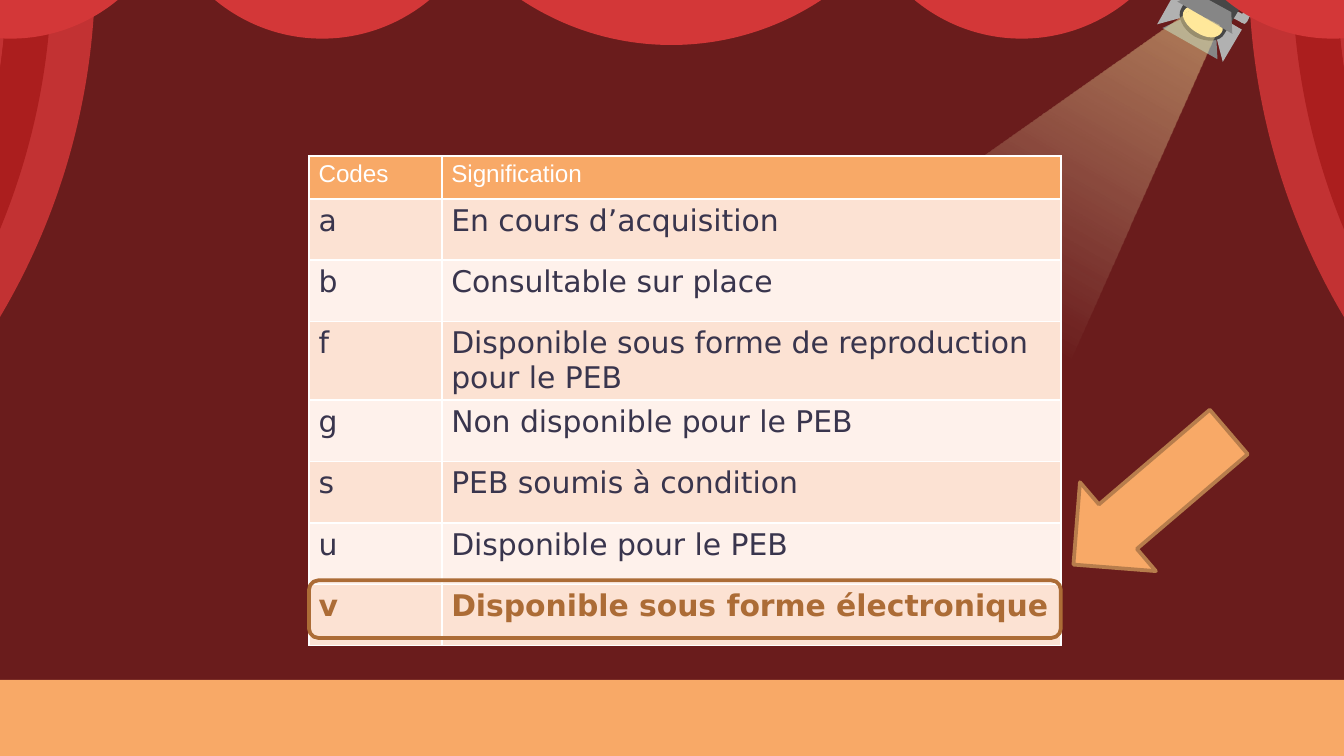
"""Build a theatre-themed slide with a table of lending codes."""
from dataclasses import dataclass

from pptx import Presentation
from pptx.dml.color import RGBColor
from pptx.enum.shapes import MSO_SHAPE as Preset
from pptx.oxml import parse_xml
from pptx.oxml.ns import nsdecls, qn
from pptx.util import Cm, Pt


@dataclass(frozen=True)
class Theme:
    backdrop: str = "6A1C1C"
    curtain: str = "C23233"
    fold: str = "AB1E1E"
    swag: str = "D33738"
    floor: str = "F8A967"
    light_grey: str = "B1B1B1"
    grey: str = "868686"
    dark_grey: str = "474747"
    lens: str = "FFE89A"
    white: str = "FFFFFF"
    ink: str = "39354D"
    accent: str = "AC6C36"
    arrow_line: str = "B77D4C"
    bands: tuple = ("FCE2D3", "FEF1EB")
    beam: tuple = ((0, "FFE89A", 48), (66, "FFF4CD", 0), (100, "FFFFFF", 0))
    header_font: str = "Arial"
    body_font: str = "DejaVu Sans"
    header_size: int = 13
    body_size: int = 16


THEME = Theme()
WIDTH, HEIGHT = 25.4, 14.29
HEADER = ("Codes", "Signification")
CODES = [
    ("a", "En cours d’acquisition"),
    ("b", "Consultable sur place"),
    ("f", "Disponible sous forme de reproduction pour le PEB"),
    ("g", "Non disponible pour le PEB"),
    ("s", "PEB soumis à condition"),
    ("u", "Disponible pour le PEB"),
    ("v", "Disponible sous forme électronique"),
]
HIGHLIGHTED = "v"
TABLE_LEFT, TABLE_TOP = 5.84, 2.95
COLUMN_WIDTHS = (2.51, 11.7)
HEADER_HEIGHT, ROW_HEIGHT = 0.81, 1.16

SPOTLIGHT = [
    (THEME.light_grey, [(23.16, 0.38), (23.47, 0.56), (23.11, 1.17), (22.99, 0.71)]),
    (THEME.light_grey, [(22.23, -0.18), (22.53, 0), (22.35, 0.33), (21.87, 0.46)]),
    (THEME.light_grey, [(23.62, 0.18), (24.05, 0.41), (23.98, 0.53), (23.55, 0.28)]),
    (THEME.light_grey, [(22.86, 0.03), (22.89, -0.03, 22.94, -0.03, 22.96, 0),
                        (23.55, 0.3), (23.57, 0.33, 23.57, 0.38, 23.57, 0.41),
                        (23.55, 0.46, 23.5, 0.46, 23.47, 0.43), (22.91, 0.13),
                        (22.86, 0.1, 22.86, 0.05, 22.86, 0.03)]),
    (THEME.grey, [(21.97, 0.53), (22.33, 0.36), (22.99, 0.74), (23.01, 1.12)]),
    (THEME.dark_grey, [(22.78, -0.64), (22.86, -0.79, 23.11, -0.81, 23.37, -0.69),
                       (23.6, -0.53, 23.7, -0.3, 23.62, -0.15), (23.14, 0.64),
                       (23.06, 0.79, 22.81, 0.81, 22.58, 0.69),
                       (22.35, 0.56, 22.23, 0.3, 22.33, 0.15)]),
    (THEME.lens, [(22.38, 0.2), (22.45, 0.08, 22.66, 0.08, 22.86, 0.2),
                  (23.04, 0.3, 23.16, 0.51, 23.09, 0.61),
                  (23.01, 0.74, 22.81, 0.74, 22.61, 0.61),
                  (22.43, 0.51, 22.3, 0.3, 22.38, 0.2)]),
    (THEME.grey, [(22.25, 0.03), (22.61, -0.13), (23.27, 0.23), (23.29, 0.64)]),
    (THEME.light_grey, [(23.04, -0.28), (23.06, -0.33, 23.11, -0.33, 23.14, -0.3),
                        (23.7, 0.03), (23.75, 0.03, 23.75, 0.08, 23.72, 0.1),
                        (23.57, 0.41), (23.55, 0.46, 23.5, 0.46, 23.47, 0.43),
                        (23.42, 0.43, 23.42, 0.38, 23.44, 0.33), (23.57, 0.1),
                        (23.06, -0.18), (23.04, -0.2, 23.04, -0.25, 23.04, -0.28)]),
]
BEAM = [(22.48, 0.2), (14.76, 5.64), (19.76, 7.87), (23.04, 0.48)]
BEAM_ANGLE = 120
CURTAIN = [
    (THEME.curtain, [(29.69, -2.18), (29.69, 10.39),
                     (26.04, 8.1, 23.6, 4.04, 23.6, -0.58), (23.6, -2.18)]),
    (THEME.fold, [(24.43, -0.1), (24.69, 0.18, 24.99, 0.38, 25.32, 0.53),
                  (25.6, 3.96, 27.25, 7.01, 29.69, 9.14), (29.69, 9.83),
                  (26.62, 7.54, 24.59, 3.96, 24.43, -0.1)]),
    (THEME.curtain, [(29.69, -2.18), (29.69, 9.14),
                     (26.97, 6.78, 25.27, 3.3, 25.27, -0.58), (25.27, -2.18)]),
]
SWAGS = [(25.19, -2.46, 3.19), (19.31, -2.46, 3.19), (0.2, -2.46, 3.19),
         (6.09, -2.46, 3.19), (12.69, -4.32, 5.17)]
ROUNDNESS = 0.55


def color(value):
    """Return a colour from its hexadecimal name."""
    return RGBColor.from_string(value)


def pairs(step):
    """Split a step into its points, in slide units."""
    return [(Cm(x), Cm(y)) for x, y in zip(step[::2], step[1::2])]


def mirror(steps):
    """Reflect steps about the middle of the slide."""
    return [tuple(value if index % 2 else WIDTH - value
                  for index, value in enumerate(step)) for step in steps]


def half_circle(centre, top, radius):
    """Return the steps of a hanging half circle."""
    reach = radius * ROUNDNESS
    left, right, bottom = centre - radius, centre + radius, top + radius
    return [(left, top),
            (left, top + reach, centre - reach, bottom, centre, bottom),
            (centre + reach, bottom, right, top + reach, right, top)]


def paint(shape, fill=None, line=None):
    """Set the fill and the outline of a shape and drop its shadow."""
    shape.shadow.inherit = False
    if fill:
        shape.fill.solid()
        shape.fill.fore_color.rgb = color(fill)
    else:
        shape.fill.background()
    if line:
        shape.line.color.rgb = color(line)
        shape.line.width = Pt(2)
    else:
        shape.line.fill.background()
    return shape


def add_outline(slide, steps, fill):
    """Draw a closed outline; two numbers are a point, six a cubic curve."""
    ends = [pairs(step)[-1] for step in steps]
    builder = slide.shapes.build_freeform(*ends[0], scale=1.0)
    builder.add_line_segments(ends[1:], close=False)
    shape = builder.convert_to_shape()
    outline = next(shape.element.iter(qn("a:path")))
    for segment, step in zip(list(outline)[1:], steps[1:]):
        if len(step) == 6:
            points = "".join(f'<a:pt x="{x - shape.left}" y="{y - shape.top}"/>'
                             for x, y in pairs(step))
            outline.replace(segment, parse_xml(
                f'<a:cubicBezTo {nsdecls("a")}>{points}</a:cubicBezTo>'))
    outline.append(parse_xml(f'<a:close {nsdecls("a")}/>'))
    return paint(shape, fill)


def add_preset(slide, preset, box, fill=None, line=None):
    """Add a preset shape in a box given in centimetres."""
    return paint(slide.shapes.add_shape(preset, *map(Cm, box)), fill, line)


def add_beam(slide):
    """Draw the beam of light with a fading gradient."""
    shape = add_outline(slide, BEAM, THEME.lens)
    stops = "".join(
        f'<a:gs pos="{place * 1000}"><a:srgbClr val="{tone}">'
        f'<a:alpha val="{alpha * 1000}"/></a:srgbClr></a:gs>'
        for place, tone, alpha in THEME.beam)
    gradient = parse_xml(
        f'<a:gradFill {nsdecls("a")} rotWithShape="1"><a:gsLst>{stops}</a:gsLst>'
        f'<a:lin ang="{BEAM_ANGLE * 60000}" scaled="0"/></a:gradFill>')
    properties = shape.element.spPr
    properties.replace(properties.find(qn("a:solidFill")), gradient)


def write_text(cell, text, *, font, size, ink, bold=False):
    """Write one formatted run in a table cell."""
    run = cell.text_frame.paragraphs[0].add_run()
    run.text = text
    run.font.name, run.font.size, run.font.bold = font, Pt(size), bold
    run.font.color.rgb = color(ink)


def style_cell(cell, fill):
    """Set the margins, white borders and fill of a cell."""
    cell.margin_left = cell.margin_right = Cm(0.18)
    cell.margin_top = cell.margin_bottom = Cm(0.09)
    properties = cell._tc.get_or_add_tcPr()
    for side in ("lnL", "lnR", "lnT", "lnB"):
        properties.append(parse_xml(
            f'<a:{side} {nsdecls("a")} w="{Pt(1)}"><a:solidFill>'
            f'<a:srgbClr val="{THEME.white}"/></a:solidFill></a:{side}>'))
    cell.fill.solid()
    cell.fill.fore_color.rgb = color(fill)


def add_codes(slide):
    """Add the table of codes."""
    heights = [HEADER_HEIGHT] + [ROW_HEIGHT] * len(CODES)
    box = (TABLE_LEFT, TABLE_TOP, sum(COLUMN_WIDTHS), sum(heights))
    table = slide.shapes.add_table(len(heights), len(HEADER), *map(Cm, box)).table
    table.first_row = table.horz_banding = False
    for column, width in zip(table.columns, COLUMN_WIDTHS):
        column.width = Cm(width)
    for index, texts in enumerate([HEADER] + CODES):
        table.rows[index].height = Cm(heights[index])
        chosen = texts[0] == HIGHLIGHTED
        look = dict(font=THEME.body_font, size=THEME.body_size, bold=chosen,
                    ink=THEME.accent if chosen else THEME.ink)
        fill = THEME.bands[(index - 1) % 2]
        if index == 0:
            look = dict(font=THEME.header_font, size=THEME.header_size, ink=THEME.white)
            fill = THEME.floor
        for cell, text in zip(table.rows[index].cells, texts):
            style_cell(cell, fill)
            write_text(cell, text, **look)


def add_stage(slide):
    """Draw the spotlight, curtains, floor and swags."""
    for fill, steps in SPOTLIGHT:
        add_outline(slide, steps, fill)
    add_beam(slide)
    for place in (list, mirror):
        for fill, steps in CURTAIN:
            add_outline(slide, place(steps), fill)
    add_preset(slide, Preset.RECTANGLE, (-0.03, 12.85, 25.48, 1.91), THEME.floor)
    for swag in SWAGS:
        add_outline(slide, half_circle(*swag), THEME.swag)


def main():
    """Build and save the presentation."""
    presentation = Presentation()
    presentation.slide_width, presentation.slide_height = Cm(WIDTH), Cm(HEIGHT)
    slide = presentation.slides.add_slide(presentation.slide_layouts[6])
    slide.background.fill.solid()
    slide.background.fill.fore_color.rgb = color(THEME.backdrop)
    add_stage(slide)
    add_codes(slide)
    add_preset(slide, Preset.ROUNDED_RECTANGLE,
               (TABLE_LEFT, 10.97, sum(COLUMN_WIDTHS), 1.09), line=THEME.accent)
    arrow = add_preset(slide, Preset.DOWN_ARROW, (20.65, 7.49, 2.21, 3.86),
                       THEME.floor, THEME.arrow_line)
    arrow.rotation = 49.5
    presentation.save("out.pptx")


if __name__ == "__main__":
    main()
